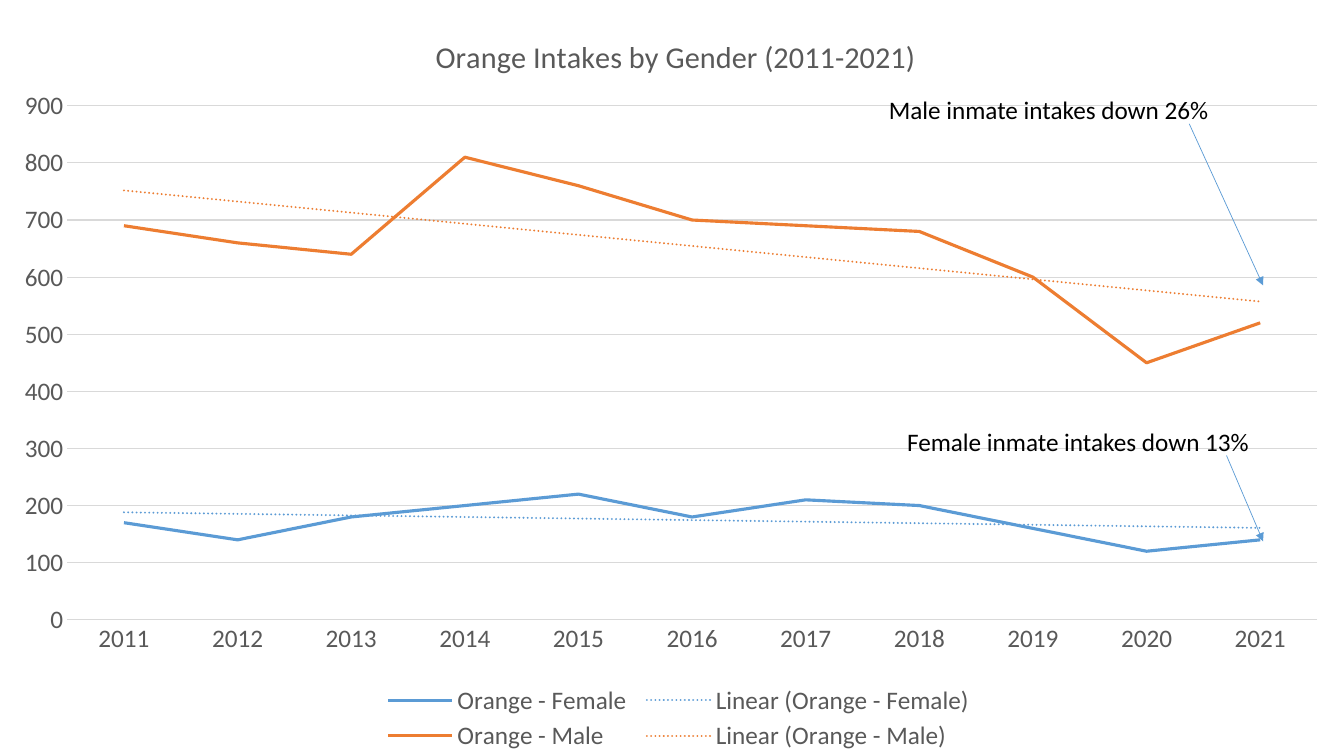
from dataclasses import dataclass

from pptx import Presentation
from pptx.chart.chart import Chart
from pptx.chart.data import CategoryChartData
from pptx.dml.color import RGBColor as Rgb
from pptx.enum.chart import XL_CHART_TYPE as Kind, XL_LEGEND_POSITION as Place
from pptx.enum.chart import XL_MARKER_STYLE as Marker, XL_TICK_MARK as Tick
from pptx.enum.shapes import MSO_CONNECTOR as Link
from pptx.enum.text import MSO_AUTO_SIZE as Fit
from pptx.oxml import parse_xml
from pptx.oxml.ns import nsdecls
from pptx.slide import Slide
from pptx.text.text import Font
from pptx.util import Cm, Pt


@dataclass(frozen=True)
class Theme:
    face: str = "Calibri"
    black: str = "000000"
    gray: str = "595959"
    grid: str = "D9D9D9"
    blue: str = "5B9BD5"
    orange: str = "ED7D31"
    body: float = 18
    title: float = 21.6


@dataclass(frozen=True)
class Group:
    name: str
    color: str
    counts: tuple[int, ...]


@dataclass(frozen=True)
class Note:
    text: str
    box: tuple[float, float, float, float]
    start: tuple[float, float]
    end: tuple[float, float]


THEME = Theme()
YEARS = [str(year) for year in range(2011, 2022)]
GROUPS = (
    Group("Orange - Female", THEME.blue,
          (170, 140, 180, 200, 220, 180, 210, 200, 160, 120, 140)),
    Group("Orange - Male", THEME.orange,
          (690, 660, 640, 810, 760, 700, 690, 680, 600, 450, 520)),
)
NOTES = (
    Note("Male inmate intakes down 26%", (22.15, 2.26, 8.66, 1.02),
         (29.97, 3.12), (31.83, 7.19)),
    Note("Female inmate intakes down 13%", (22.61, 10.62, 9.22, 1.02),
         (30.91, 11.48), (31.83, 13.64)),
)


def style(font: Font, color: str, size: float) -> None:
    font.name = THEME.face
    font.size = Pt(size)
    font.bold = False
    font.color.rgb = Rgb.from_string(color)


def layout(x: float, y: float, wide: float = 0, high: float = 0, inner: bool = False):
    target = '<c:layoutTarget val="inner"/>' if inner else ""
    extent = f'<c:w val="{wide}"/><c:h val="{high}"/>' if wide else ""
    return parse_xml(
        f'<c:layout {nsdecls("c")}><c:manualLayout>{target}'
        f'<c:xMode val="edge"/><c:yMode val="edge"/>'
        f'<c:x val="{x}"/><c:y val="{y}"/>{extent}</c:manualLayout></c:layout>')


def trend(color: str):
    return parse_xml(
        f'<c:trendline {nsdecls("c", "a")}><c:spPr><a:ln w="{Pt(1.5)}" cap="rnd">'
        f'<a:solidFill><a:srgbClr val="{color}"/></a:solidFill>'
        f'<a:prstDash val="sysDot"/></a:ln></c:spPr>'
        f'<c:trendlineType val="linear"/><c:dispRSqr val="0"/>'
        f'<c:dispEq val="0"/></c:trendline>')


def arrange(chart: Chart) -> None:
    root = chart.element
    for old in root.xpath(".//c:plotArea/c:layout | .//c:title/c:layout | .//c:legend/c:layout"):
        old.getparent().remove(old)
    root.xpath(".//c:plotArea")[0].insert(0, layout(0.05, 0.14, 0.93, 0.68, True))
    root.xpath("./c:chart/c:title/c:overlay")[0].addprevious(layout(0.32, 0.04))
    root.xpath(".//c:legend/c:overlay")[0].addprevious(layout(0.28, 0.9, 0.45, 0.1))


def set_axes(chart: Chart) -> None:
    cat, val = chart.category_axis, chart.value_axis
    for axis in (cat, val):
        axis.major_tick_mark = axis.minor_tick_mark = Tick.NONE
        style(axis.tick_labels.font, THEME.gray, THEME.body)
    val.minimum_scale, val.maximum_scale, val.major_unit = 0, 900, 100
    val.has_major_gridlines = True
    val.format.line.fill.background()
    for line in (cat.format.line, val.major_gridlines.format.line):
        line.color.rgb = Rgb.from_string(THEME.grid)
        line.width = Pt(0.75)


def add_graph(slide: Slide, wide: int, high: int) -> None:
    data = CategoryChartData()
    data.categories = YEARS
    for group in GROUPS:
        data.add_series(group.name, group.counts)
    chart = slide.shapes.add_chart(Kind.LINE, 0, 0, wide, high, data).chart
    style(chart.font, THEME.black, THEME.body)
    chart.has_title = True
    run = chart.chart_title.text_frame.paragraphs[0].add_run()
    run.text = "Orange Intakes by Gender (2011-2021)"
    style(run.font, THEME.gray, THEME.title)
    chart.has_legend = True
    chart.legend.position = Place.BOTTOM
    chart.legend.include_in_layout = False
    style(chart.legend.font, THEME.gray, THEME.body)
    set_axes(chart)
    plot = chart.plots[0]
    plot.vary_by_categories = False
    for group, series in zip(GROUPS, plot.series):
        series.smooth = False
        series.marker.style = Marker.NONE
        series.format.line.color.rgb = Rgb.from_string(group.color)
        series.format.line.width = Pt(2.25)
    for group, node in zip(GROUPS, chart.element.xpath(".//c:ser")):
        node.xpath("./c:cat")[0].addprevious(trend(group.color))
    arrange(chart)


def add_note(slide: Slide, note: Note) -> None:
    frame = slide.shapes.add_textbox(*map(Cm, note.box)).text_frame
    frame.word_wrap = False
    frame.auto_size = Fit.SHAPE_TO_FIT_TEXT
    run = frame.paragraphs[0].add_run()
    run.text = note.text
    style(run.font, THEME.black, THEME.body)
    arrow = slide.shapes.add_connector(Link.STRAIGHT, *map(Cm, note.start + note.end))
    arrow.line.color.rgb = Rgb.from_string(THEME.blue)
    arrow.line.width = Pt(0.5)
    shape = arrow.element.xpath("./p:spPr")[0]
    shape.xpath("./a:ln")[0].append(
        parse_xml(f'<a:tailEnd {nsdecls("a")} type="triangle"/>'))
    shape.append(parse_xml(f'<a:effectLst {nsdecls("a")}/>'))


def main() -> None:
    deck = Presentation()
    deck.slide_width, deck.slide_height = Cm(33.87), Cm(19.05)
    slide = deck.slides.add_slide(deck.slide_layouts[6])
    add_graph(slide, deck.slide_width, deck.slide_height)
    for note in NOTES:
        add_note(slide, note)
    deck.save("out.pptx")


if __name__ == "__main__":
    main()
